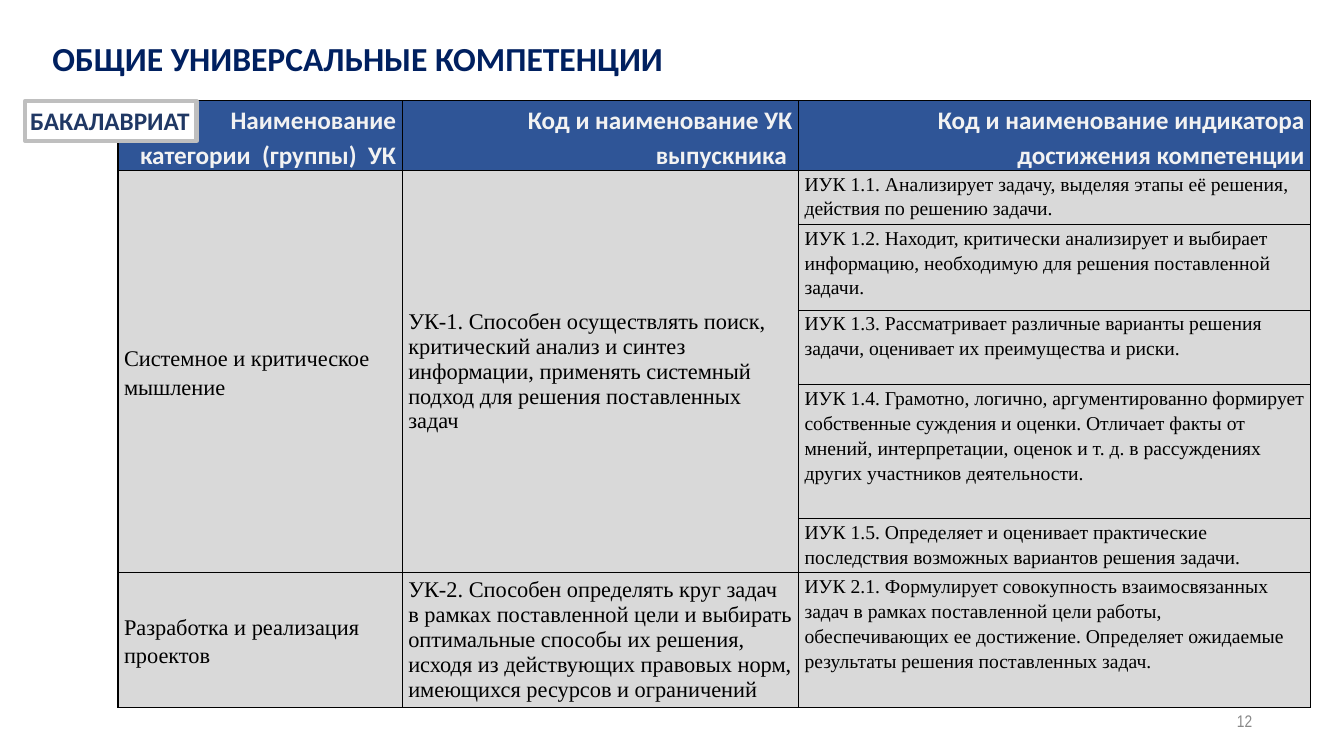
"""Build the slide on general universal competences for bachelor students."""
from dataclasses import dataclass

from lxml import etree
from pptx import Presentation
from pptx import util as u
from pptx.dml.color import RGBColor
from pptx.enum import shapes, text
from pptx.oxml import ns

TITLE = "ОБЩИЕ УНИВЕРСАЛЬНЫЕ КОМПЕТЕНЦИИ"
HEADERS = [
    "Наименование категории  (группы)  УК",
    "Код и наименование УК выпускника ",
    "Код и наименование индикатора достижения компетенции",
]
COMPETENCES = [
    (
        "Системное и критическое мышление",
        "УК-1. Способен осуществлять поиск, критический анализ и синтез информации, "
        "применять системный подход для решения поставленных задач",
        [
            "ИУК 1.1. Анализирует задачу, выделяя этапы её решения, действия по решению задачи.",
            "ИУК 1.2. Находит, критически анализирует и выбирает информацию, "
            "необходимую для решения поставленной задачи.",
            "ИУК 1.3. Рассматривает различные варианты решения задачи, "
            "оценивает их преимущества и риски.",
            "ИУК 1.4. Грамотно, логично, аргументированно формирует собственные суждения и оценки. "
            "Отличает факты от мнений, интерпретации, оценок и т. д. "
            "в рассуждениях других участников деятельности.",
            "ИУК 1.5. Определяет и оценивает практические последствия "
            "возможных вариантов решения задачи.",
        ],
    ),
    (
        "Разработка и реализация проектов",
        "УК-2. Способен определять круг задач в рамках поставленной цели и выбирать "
        "оптимальные способы их решения, исходя из действующих правовых норм, "
        "имеющихся ресурсов и ограничений",
        [
            "ИУК 2.1. Формулирует совокупность взаимосвязанных задач в рамках поставленной "
            "цели работы, обеспечивающих ее достижение. Определяет ожидаемые результаты "
            "решения поставленных задач.",
        ],
    ),
]
COLUMN_WIDTHS = [282, 393, 508]
ROW_HEIGHTS = [65, 53, 85, 74, 133, 26, 133]


@dataclass(frozen=True)
class Theme:
    """Colours, fonts and type sizes of the slide."""
    title: str = "002060"
    header_fill: str = "2F5597"
    header_text: str = "F2F2F2"
    body_fill: str = "D9D9D9"
    body_text: str = "000000"
    border: str = "000000"
    badge_text: str = "203864"
    badge_fill: str = "FFFFFF"
    badge_line: str = "BFBFBF"
    number: str = "888888"
    heading_font: str = "Calibri"
    body_font: str = "Times New Roman"
    number_font: str = "Arial Narrow"
    title_size: int = 24
    heading_size: int = 18
    body_size: int = 16
    indicator_size: int = 14
    number_size: int = 12


def px(value):
    """Turn px into EMU at 100 px to the inch."""
    return u.Emu(value * 9144)


def write(frame, words, *, font, size, color, bold=False,
          align=text.PP_ALIGN.LEFT, spacing=None):
    """Put one formatted paragraph into a text frame."""
    paragraph = frame.paragraphs[0]
    paragraph.alignment = align
    if spacing:
        paragraph.line_spacing = spacing
    run = paragraph.add_run()
    run.text = words
    run.font.name = font
    run.font.size = u.Pt(size)
    run.font.bold = bold
    run.font.color.rgb = RGBColor.from_string(color)


def set_margins(target, horizontal, vertical):
    """Set equal side margins and equal top and bottom margins."""
    target.margin_left = target.margin_right = px(horizontal)
    target.margin_top = target.margin_bottom = px(vertical)


class SlideBuilder:
    """Hold the theme and the current slide, and add elements to it."""

    def __init__(self, presentation, theme):
        self.theme = theme
        self.slide = presentation.slides.add_slide(presentation.slide_layouts[5])

    def title(self, words, left, top, width, height):
        """Place and format the title placeholder."""
        shape = self.slide.shapes.title
        shape.left, shape.top, shape.width, shape.height = map(px, (left, top, width, height))
        frame = shape.text_frame
        frame.vertical_anchor = text.MSO_ANCHOR.TOP
        frame.auto_size = text.MSO_AUTO_SIZE.SHAPE_TO_FIT_TEXT
        set_margins(frame, 10, 5)
        write(frame, words, font=self.theme.heading_font, size=self.theme.title_size,
              color=self.theme.title, bold=True)

    def page_number(self, words, left, top, width, height):
        """Add the right-aligned page number."""
        frame = self.slide.shapes.add_textbox(*map(px, (left, top, width, height))).text_frame
        frame.word_wrap = True
        frame.vertical_anchor = text.MSO_ANCHOR.MIDDLE
        set_margins(frame, 0, 0)
        write(frame, words, font=self.theme.number_font, size=self.theme.number_size,
              color=self.theme.number, align=text.PP_ALIGN.RIGHT, spacing=u.Pt(13.2))

    def badge(self, words, left, top, width, height):
        """Add the framed label of the study level."""
        shape = self.slide.shapes.add_shape(
            shapes.MSO_SHAPE.RECTANGLE, *map(px, (left, top, width, height)))
        shape.shadow.inherit = False
        shape.fill.solid()
        shape.fill.fore_color.rgb = RGBColor.from_string(self.theme.badge_fill)
        shape.line.color.rgb = RGBColor.from_string(self.theme.badge_line)
        shape.line.width = u.Pt(3)
        frame = shape.text_frame
        frame.word_wrap = False
        frame.auto_size = text.MSO_AUTO_SIZE.SHAPE_TO_FIT_TEXT
        frame.vertical_anchor = text.MSO_ANCHOR.TOP
        set_margins(frame, 5, 5)
        write(frame, words, font=self.theme.heading_font, size=self.theme.heading_size,
              color=self.theme.badge_text, bold=True)

    def table(self, left, top, widths, heights):
        """Add an empty table with body fill, margins and borders."""
        table = self.slide.shapes.add_table(
            len(heights), len(widths),
            *map(px, (left, top, sum(widths), sum(heights)))).table
        table.first_row = table.horz_banding = False
        for column, width in zip(table.columns, widths):
            column.width = px(width)
        for row, height in zip(table.rows, heights):
            row.height = px(height)
            for cell in row.cells:
                set_margins(cell, 6, 0)
                self.border(cell)
                self.fill(cell, self.theme.body_fill)
        return table

    def border(self, cell):
        """Draw a thin line on each side of a cell."""
        properties = cell._tc.get_or_add_tcPr()
        for side in ("a:lnL", "a:lnR", "a:lnT", "a:lnB"):
            line = etree.SubElement(properties, ns.qn(side), w=str(u.Pt(1)))
            fill = etree.SubElement(line, ns.qn("a:solidFill"))
            etree.SubElement(fill, ns.qn("a:srgbClr"), val=self.theme.border)

    def fill(self, cell, color):
        """Fill a cell with one colour."""
        cell.fill.solid()
        cell.fill.fore_color.rgb = RGBColor.from_string(color)

    def header(self, cell, words):
        """Write a column heading."""
        self.fill(cell, self.theme.header_fill)
        write(cell.text_frame, words, font=self.theme.heading_font,
              size=self.theme.heading_size, color=self.theme.header_text, bold=True,
              align=text.PP_ALIGN.RIGHT, spacing=1.15)

    def body(self, cell, words, size, anchor=text.MSO_ANCHOR.TOP, spacing=1.15):
        """Write a body cell."""
        cell.vertical_anchor = anchor
        write(cell.text_frame, words, font=self.theme.body_font, size=size,
              color=self.theme.body_text, spacing=spacing)


def main():
    """Build and save the slide."""
    theme = Theme()
    presentation = Presentation()
    presentation.slide_width, presentation.slide_height = px(1333), px(750)
    builder = SlideBuilder(presentation, theme)
    builder.title(TITLE, 42, 33, 1200, 50)
    builder.page_number("12", 942, 700, 300, 32)

    table = builder.table(117, 100, COLUMN_WIDTHS, ROW_HEIGHTS)
    for column, words in enumerate(HEADERS):
        builder.header(table.cell(0, column), words)
    first = 1
    for category, competence, indicators in COMPETENCES:
        last = first + len(indicators) - 1
        for column, words, spacing in ((0, category, 1.15), (1, competence, None)):
            cell = table.cell(first, column)
            if last > first:
                cell.merge(table.cell(last, column))
            builder.body(cell, words, theme.body_size, text.MSO_ANCHOR.MIDDLE, spacing)
        for row, words in enumerate(indicators, first):
            builder.body(table.cell(row, 2), words, theme.indicator_size)
        first = last + 1

    builder.badge("БАКАЛАВРИАТ", 25, 100, 170, 40)
    presentation.save("out.pptx")


if __name__ == "__main__":
    main()
